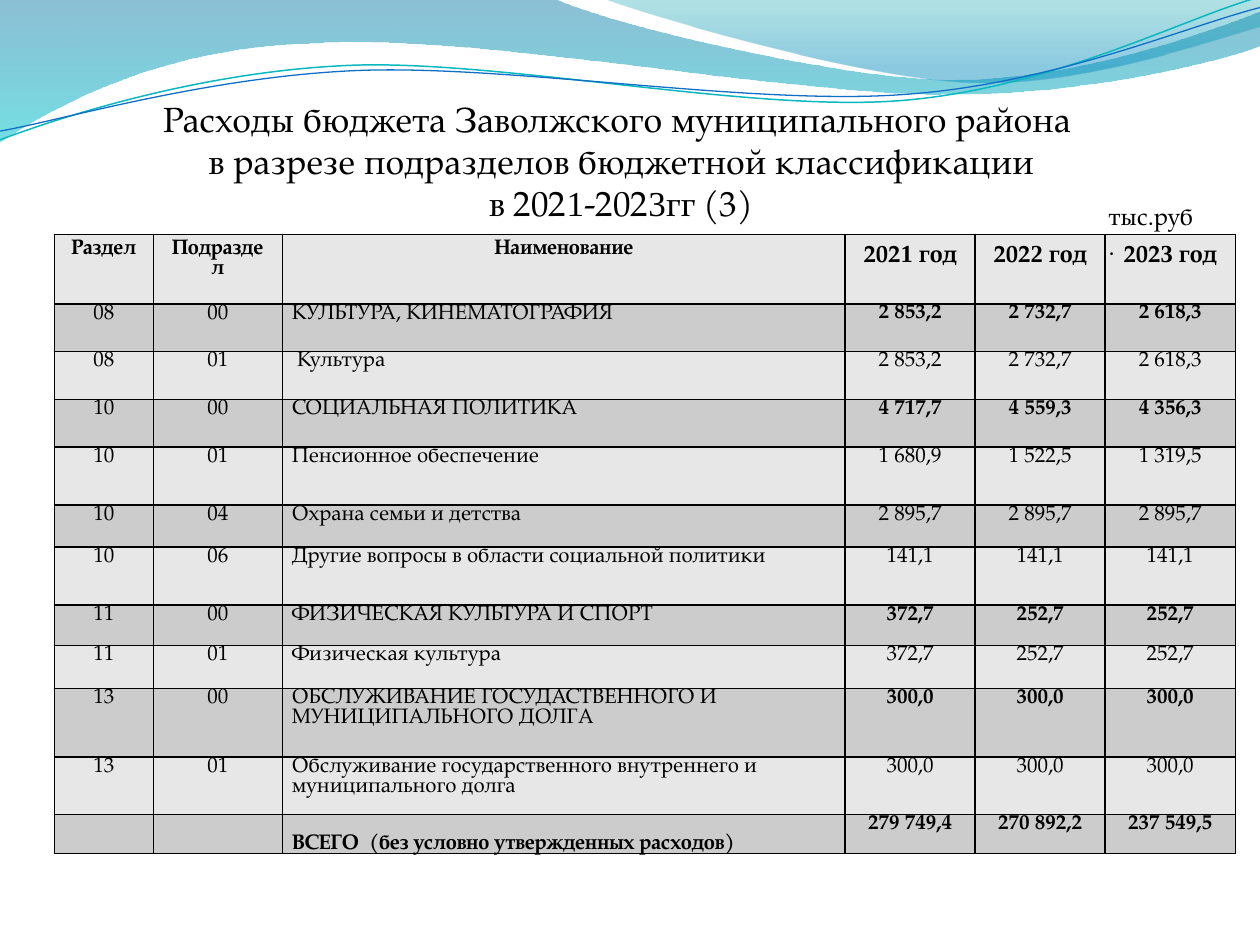
from dataclasses import dataclass

from lxml.etree import SubElement
from pptx import Presentation
from pptx.dml.color import RGBColor
from pptx.enum.text import MSO_ANCHOR, MSO_AUTO_SIZE, PP_ALIGN
from pptx.oxml import parse_xml
from pptx.oxml.ns import nsdecls, qn
from pptx.slide import Slide
from pptx.util import Pt

BLACK = RGBColor(0x00, 0x00, 0x00)
LIGHT_GRAY = RGBColor(0xE7, 0xE7, 0xE7)
MID_GRAY = RGBColor(0xCC, 0xCC, 0xCC)
TEAL = RGBColor(0x0A, 0xB8, 0xBF)
BLUE = RGBColor(0x0F, 0x6F, 0xC6)
WAVE_BLUE = RGBColor(0x00, 0x74, 0xA1)
WAVE_CYAN = RGBColor(0x00, 0xC6, 0xCF)
CREST_TEAL = RGBColor(0x00, 0xA1, 0xA9)
CREST_BLUE = RGBColor(0x00, 0x8B, 0xBF)

BODY_FONT = "TeX Gyre Pagella"
DIGIT_FONT = "Times New Roman"

WIDE_WAVE = [
    (0, 0), (316.8, -0.7),
    (342.7, 12.2, 478, 45.4, 545.8, 45.4),
    (614.2, 45.4, 689.8, 18.7, 720, 6.5),
    (720.7, 25.9),
    (707.8, 31.7, 626.4, 54.7, 537.1, 54),
    (447.8, 54, 275, 20.2, 185, 24.5),
    (92.9, 25.9, 33.1, 59.8, -0.7, 81.4),
]
CREST_WAVE = [
    (344.9, -0.7),
    (366.5, 7.9, 491, 44.6, 553.7, 46.8),
    (616.3, 49.7, 691.9, 23, 720, 15.1),
    (720, 0),
]
TEAL_CURVE = [
    (0, 79.9),
    (34.6, 67, 113.8, 41, 199.4, 37.4),
    (284.4, 33.8, 427, 64.1, 513.4, 57.6),
    (599.8, 51.1, 675.4, 10.8, 718.6, -1.4),
]
BLUE_CURVE = [
    (0, 74.9),
    (33.8, 69.1, 118.1, 43.9, 203.8, 40.3),
    (290.2, 36.7, 429.8, 60.5, 516.2, 54),
    (601.9, 48.2, 677.5, 15.1, 720, 4.3),
]

TITLE_LINES = [
    [("Расходы бюджета Заволжского муниципального района ", BODY_FONT)],
    [("в разрезе подразделов бюджетной классификации", BODY_FONT)],
    [("в 202", BODY_FONT), ("1", DIGIT_FONT), ("-202", BODY_FONT),
     ("3", DIGIT_FONT), ("гг (3)", BODY_FONT)],
]
HEADINGS = ["Раздел", "Подраздел", "Наименование"]
YEAR_DIGITS = "123"
COLUMN_WIDTHS = [56.6, 73.8, 321.6, 74.3, 74.3, 74.3]
ROW_HEIGHTS = [39.6, 27.3, 27.3, 27.2, 33.2, 24, 33.2, 23.1, 24.5, 39.4, 32.9, 22.3]
EXPENSES = [
    ("08", "00", "КУЛЬТУРА, КИНЕМАТОГРАФИЯ", "2 853,2", "2 732,7", "2 618,3"),
    ("08", "01", " Культура", "2 853,2", "2 732,7", "2 618,3"),
    ("10", "00", "СОЦИАЛЬНАЯ ПОЛИТИКА", "4 717,7", "4 559,3", "4 356,3"),
    ("10", "01", "Пенсионное обеспечение", "1 680,9", "1 522,5", "1 319,5"),
    ("10", "04", "Охрана семьи и детства", "2 895,7", "2 895,7", "2 895,7"),
    ("10", "06", "Другие вопросы в области социальной политики", "141,1", "141,1", "141,1"),
    ("11", "00", "ФИЗИЧЕСКАЯ КУЛЬТУРА И СПОРТ", "372,7", "252,7", "252,7"),
    ("11", "01", "Физическая культура", "372,7", "252,7", "252,7"),
    ("13", "00", "ОБСЛУЖИВАНИЕ ГОСУДАСТВЕННОГО И МУНИЦИПАЛЬНОГО ДОЛГА",
     "300,0", "300,0", "300,0"),
    ("13", "01", "Обслуживание государственного внутреннего и муниципального долга",
     "300,0", "300,0", "300,0"),
    ("", "", "ВСЕГО  (без условно утвержденных расходов)",
     "279 749,4", "270 892,2", "237 549,5"),
]


@dataclass
class BudgetSlide:
    slide: Slide
    font: str = BODY_FONT
    color: RGBColor = BLACK

    def span(self, para, text, size, bold=False, font=None):
        span = para.add_run()
        span.text = text
        span.font.size = Pt(size)
        span.font.bold = bold
        span.font.name = font or self.font
        span.font.color.rgb = self.color

    def outline(self, segments, close):
        ends = [(Pt(segment[-2]), Pt(segment[-1])) for segment in segments]
        builder = self.slide.shapes.build_freeform(*ends[0])
        builder.add_line_segments(ends[1:], close=close)
        shape = builder.convert_to_shape()
        shape.shadow.inherit = False
        lines = list(shape.element.spPr.iter(qn("a:lnTo")))
        for line, segment in zip(lines, segments[1:]):
            if len(segment) == 6:
                line.tag = qn("a:cubicBezTo")
                for index in (0, 1):
                    x, y = segment[2 * index:2 * index + 2]
                    line.insert(index, parse_xml(
                        f'<a:pt {nsdecls("a")} x="{Pt(x) - shape.left}" '
                        f'y="{Pt(y) - shape.top}"/>'))
        return shape

    def wave(self, segments, stops):
        shape = self.outline(segments, True)
        shape.line.fill.background()
        gradient = parse_xml(f'<a:gradFill {nsdecls("a")}><a:gsLst/>'
                             '<a:lin ang="5400000" scaled="0"/></a:gradFill>')
        for position, color, opacity in stops:
            stop = SubElement(gradient[0], qn("a:gs"), pos=str(position * 1000))
            tint = SubElement(stop, qn("a:srgbClr"), val=str(color))
            SubElement(tint, qn("a:alpha"), val=str(opacity * 1000))
        shape.element.spPr.find(qn("a:custGeom")).addnext(gradient)

    def curve(self, segments, color, width):
        shape = self.outline(segments, False)
        shape.fill.background()
        shape.line.color.rgb = color
        shape.line.width = Pt(width)

    def title(self, lines, left, top, width, height):
        box = self.slide.shapes.title
        self.slide.shapes.element.append(box.element)
        box.left, box.top, box.width, box.height = map(Pt, (left, top, width, height))
        frame = box.text_frame
        frame.auto_size = MSO_AUTO_SIZE.NONE
        frame.vertical_anchor = MSO_ANCHOR.BOTTOM
        frame.margin_left = frame.margin_right = frame.margin_bottom = 0
        frame.margin_top = Pt(3.6)
        para = frame.paragraphs[0]
        para.alignment = PP_ALIGN.CENTER
        for index, line in enumerate(lines):
            if index:
                para.add_line_break()
            for text, font in line:
                self.span(para, text, 20, font=font)

    def cell(self, cell, fill, align):
        cell.fill.solid()
        cell.fill.fore_color.rgb = fill
        properties = cell._tc.get_or_add_tcPr()
        for index, side in enumerate(("lnL", "lnR", "lnT", "lnB")):
            properties.insert(index, parse_xml(
                f'<a:{side} {nsdecls("a")} w="{Pt(1)}"><a:solidFill>'
                f'<a:srgbClr val="{BLACK}"/></a:solidFill></a:{side}>'))
        para = cell.text_frame.paragraphs[0]
        para.alignment = align
        return para

    def expense_table(self, left, top):
        frame = self.slide.shapes.add_table(
            len(ROW_HEIGHTS), len(COLUMN_WIDTHS), Pt(left), Pt(top),
            Pt(sum(COLUMN_WIDTHS)), Pt(sum(ROW_HEIGHTS)))
        table = frame.table
        for column, width in zip(table.columns, COLUMN_WIDTHS):
            column.width = Pt(width)
        for row, height in zip(table.rows, ROW_HEIGHTS):
            row.height = Pt(height)

        for index in range(len(COLUMN_WIDTHS)):
            cell = table.cell(0, index)
            para = self.cell(cell, LIGHT_GRAY, PP_ALIGN.CENTER)
            if index < len(HEADINGS):
                para.line_spacing = 0.95
                cell.margin_top = Pt(3)
                self.span(para, HEADINGS[index], 12, True)
            else:
                self.span(para, "202", 14, True)
                self.span(para, YEAR_DIGITS[index - len(HEADINGS)], 14, True, DIGIT_FONT)
                self.span(para, " год", 14, True)

        for row, record in enumerate(EXPENSES, 1):
            total = not record[0]
            for index, text in enumerate(record):
                cell = table.cell(row, index)
                para = self.cell(cell, MID_GRAY if row % 2 else LIGHT_GRAY,
                                 PP_ALIGN.LEFT if index == 2 else PP_ALIGN.CENTER)
                para.line_spacing = 0.92
                cell.margin_left = cell.margin_right = Pt(5.4)
                cell.margin_top = cell.margin_bottom = 0
                if total and index == 2:
                    cell.vertical_anchor = MSO_ANCHOR.BOTTOM
                if text:
                    self.span(para, text, 12, total or (index > 2 and record[1] == "00"))

    def label(self, text, left, top, width, height):
        box = self.slide.shapes.add_textbox(*map(Pt, (left, top, width, height)))
        box.text_frame.word_wrap = True
        self.span(box.text_frame.paragraphs[0], text, 14)


def main():
    deck = Presentation()
    deck.slide_width, deck.slide_height = Pt(720), Pt(540)
    page = BudgetSlide(deck.slides.add_slide(deck.slide_layouts[5]))
    page.wave(WIDE_WAVE, [(0, WAVE_BLUE, 45), (100, WAVE_CYAN, 55)])
    page.wave(CREST_WAVE, [(0, CREST_TEAL, 30), (80, CREST_BLUE, 45)])
    page.curve(TEAL_CURVE, TEAL, 0.85)
    page.curve(BLUE_CURVE, BLUE, 0.75)
    page.title(TITLE_LINES, 31, 37.5, 648, 90)
    page.expense_table(31, 134)
    page.label("тыс.руб.", 626.4, 111.6, 64.8, 24.5)
    deck.save("out.pptx")


if __name__ == "__main__":
    main()
